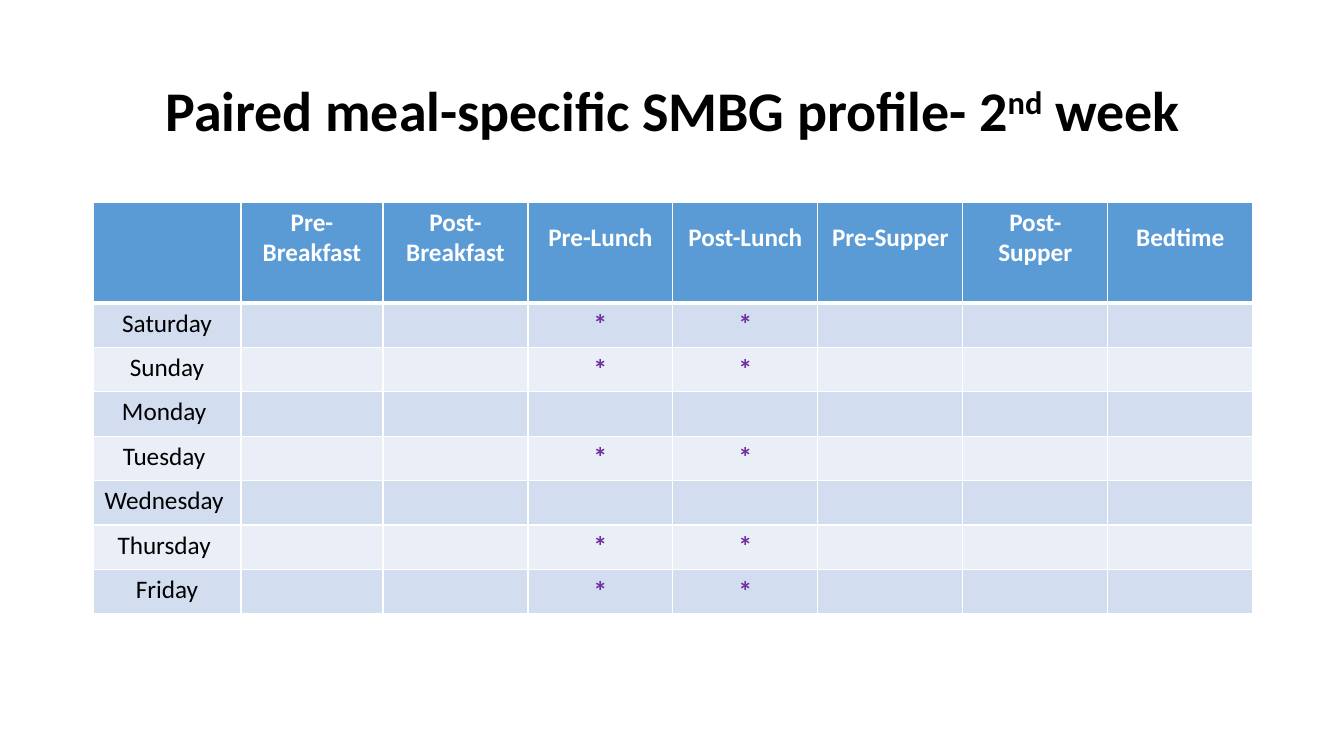
from dataclasses import dataclass

from lxml import etree
from pptx import Presentation
from pptx.dml.color import RGBColor
from pptx.enum.text import MSO_ANCHOR, PP_ALIGN
from pptx.oxml.ns import qn
from pptx.util import Pt

CENTER = PP_ALIGN.CENTER
TOP, MIDDLE = MSO_ANCHOR.TOP, MSO_ANCHOR.MIDDLE
EMU_PER_PX = 914400 / 100.8
BLANK_LAYOUT = 6


@dataclass(frozen=True)
class Theme:
    font: str = "Calibri"
    text: str = "000000"
    white: str = "FFFFFF"
    header: str = "5B9BD5"
    bands: tuple = ("D2DEEF", "EAEFF7")
    mark: str = "7030A0"
    title_size: int = 40
    table_size: int = 18
    mark_size: int = 20
    thin: int = 1
    thick: int = 3


def px(length):
    return round(length * EMU_PER_PX)


def add_text(paragraph, text, *, font, size, color, bold=False, baseline=0):
    paragraph.alignment = CENTER
    run = paragraph.add_run()
    run.text = text
    run.font.name = font
    run.font.size = Pt(size)
    run.font.bold = bold
    run.font.color.rgb = RGBColor.from_string(color)
    if baseline:
        run.font._element.set("baseline", str(baseline * 1000))


class SlideBuilder:
    def __init__(self, slide, theme):
        self.slide = slide
        self.theme = theme

    def title(self, parts, left, top, width, height):
        box = self.slide.shapes.add_textbox(px(left), px(top), px(width), px(height))
        frame = box.text_frame
        frame.word_wrap = True
        frame.vertical_anchor = MIDDLE
        paragraph = frame.paragraphs[0]
        paragraph.line_spacing = 0.9
        for text, baseline in parts:
            add_text(paragraph, text, font=self.theme.font, size=self.theme.title_size,
                     color=self.theme.text, bold=True, baseline=baseline)

    def table(self, row_count, left, top, widths, header_height, body_height):
        shape = self.slide.shapes.add_table(
            row_count, len(widths), px(left), px(top),
            px(sum(widths)), px(header_height + body_height))
        table = shape.table
        for column, width in zip(table.columns, widths):
            column.width = px(width)
        for index, row in enumerate(table.rows):
            row.height = px(body_height / (row_count - 1) if index else header_height)
        return table

    def cell(self, cell, text, fill, *, size, color, bold=False, anchor=TOP,
             top_line=1, bottom_line=1):
        lines = {"L": self.theme.thin, "R": self.theme.thin, "T": top_line, "B": bottom_line}
        properties = cell._tc.get_or_add_tcPr()
        for side, points in lines.items():
            line = etree.SubElement(properties, qn(f"a:ln{side}"), w=str(Pt(points)))
            solid = etree.SubElement(line, qn("a:solidFill"))
            etree.SubElement(solid, qn("a:srgbClr"), val=self.theme.white)
        cell.fill.solid()
        cell.fill.fore_color.rgb = RGBColor.from_string(fill)
        cell.vertical_anchor = anchor
        if text:
            add_text(cell.text_frame.paragraphs[0], text, font=self.theme.font,
                     size=size, color=color, bold=bold)


def main():
    presentation = Presentation()
    presentation.slide_width, presentation.slide_height = px(1344), px(756)
    slide = presentation.slides.add_slide(presentation.slide_layouts[BLANK_LAYOUT])
    theme = Theme()
    builder = SlideBuilder(slide, theme)

    # Title
    title_parts = [("Paired meal-specific SMBG profile- 2", 0), ("nd", 30), (" week", 0)]
    builder.title(title_parts, 93, 40, 1159, 146)

    # Weekly test plan
    times = ["", "Pre-Breakfast", "Post-Breakfast", "Pre-Lunch", "Post-Lunch",
             "Pre-Supper", "Post-Supper", "Bedtime"]
    days = ["Saturday", "Sunday", "Monday ", "Tuesday ", "Wednesday ", "Thursday ", "Friday"]
    days_off = {"Monday ", "Wednesday "}
    tested_times = {"Pre-Lunch", "Post-Lunch"}
    widths = [148, 142] + [145] * 6
    table = builder.table(len(days) + 1, 93, 202, widths, 101, 311)

    # Header row, its text raised by a deep bottom margin
    for column, time in enumerate(times):
        cell = table.cell(0, column)
        builder.cell(cell, time, theme.header, size=theme.table_size, color=theme.white,
                     bold=True, anchor=MIDDLE, bottom_line=theme.thick)
        cell.margin_bottom = px(35)

    # Day rows
    for row, day in enumerate(days, start=1):
        fill = theme.bands[(row - 1) % 2]
        top_line = theme.thick if row == 1 else theme.thin
        builder.cell(table.cell(row, 0), day, fill, size=theme.table_size,
                     color=theme.text, top_line=top_line)
        for column, time in enumerate(times[1:], start=1):
            tested = time in tested_times and day not in days_off
            builder.cell(table.cell(row, column), "*" if tested else "", fill,
                         size=theme.mark_size, color=theme.mark, bold=True,
                         top_line=top_line)

    presentation.save("out.pptx")


if __name__ == "__main__":
    main()
